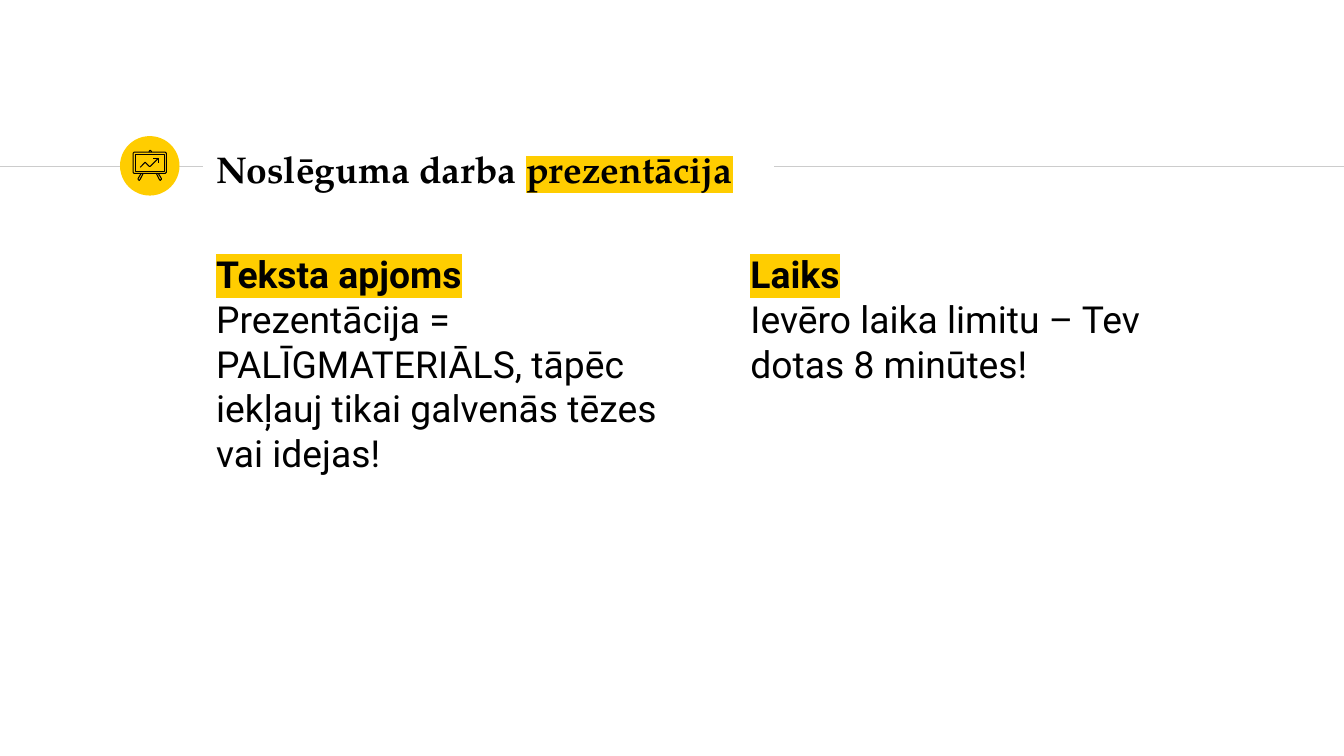
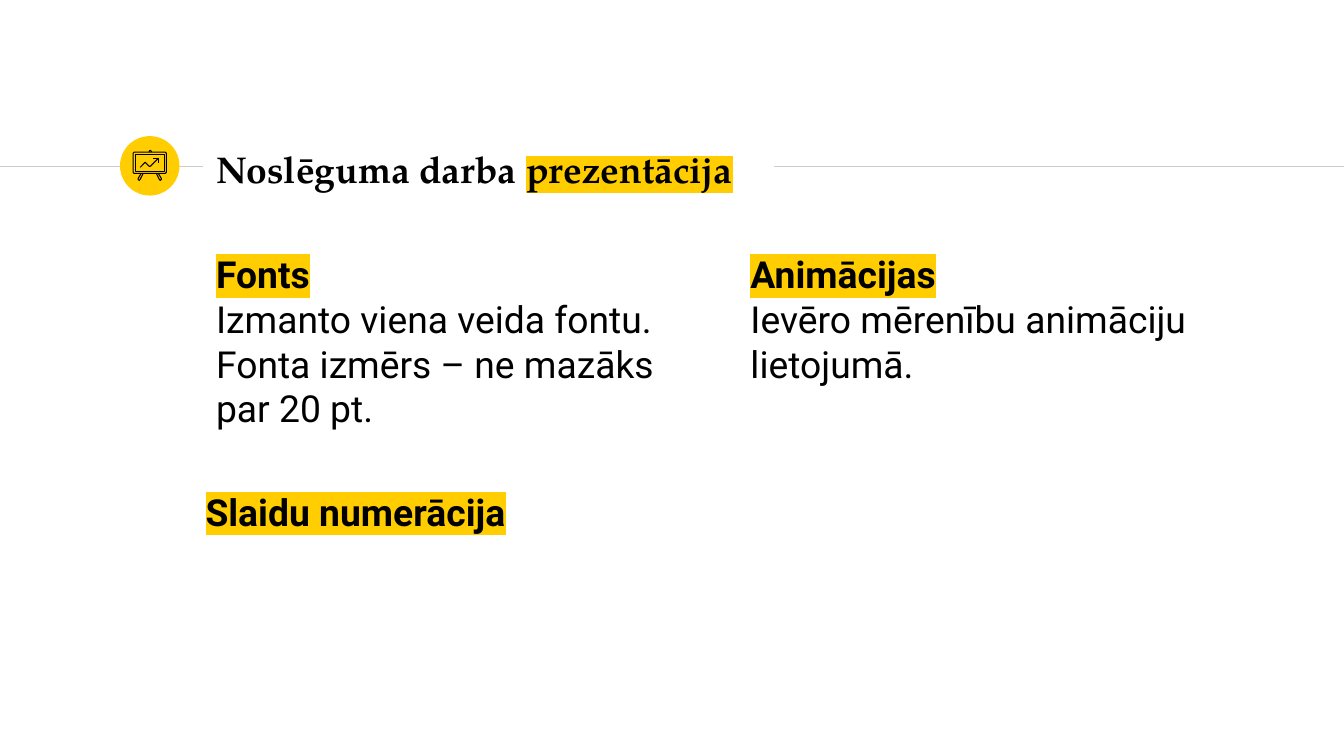
from lxml.etree import SubElement
from pptx import Presentation
from pptx.dml.color import RGBColor
from pptx.enum.shapes import MSO_CONNECTOR, MSO_SHAPE
from pptx.enum.text import MSO_ANCHOR, MSO_AUTO_SIZE, PP_ALIGN
from pptx.oxml.ns import qn
from pptx.util import Inches, Pt

YELLOW = RGBColor(0xFF, 0xCD, 0x00)
BLACK = RGBColor(0x00, 0x00, 0x00)
GREY = RGBColor(0xCC, 0xCC, 0xCC)
HEADING_FONT = "TeX Gyre Pagella"
BODY_FONT = "Roboto"
TEXT_SIZE = Pt(26.67)
INSET = Inches(2 / 15)
RULE_Y = 1.65
COLUMN_TOP = 2.36
COLUMN_WIDTH = 4.99
COLUMN_LEFTS = (2.01, 7.31)
FRAME_FORMAT = {
    "margin_left": INSET, "margin_top": INSET,
    "margin_right": INSET, "margin_bottom": INSET,
    "word_wrap": True, "auto_size": MSO_AUTO_SIZE.NONE,
}
PARAGRAPH_FORMAT = {
    "alignment": PP_ALIGN.LEFT, "line_spacing": 1.0,
    "space_before": Pt(0), "space_after": Pt(0),
}

ICON_CENTRE = 1.485
LEFT_LEG = [(1.4, 1.72), (1.37, 1.77), (1.37, 1.78), (1.38, 1.79), (1.39, 1.78), (1.42, 1.72)]
RIGHT_LEG = [(2 * ICON_CENTRE - x, y) for x, y in LEFT_LEG]
BOARD_EDGE = [(1.33, 1.51), (1.64, 1.51), (1.65, 1.52), (1.65, 1.71),
              (1.64, 1.72), (1.33, 1.72), (1.32, 1.71), (1.32, 1.52)]
BOARD_SHEET = [(1.34, 1.53), (1.63, 1.53), (1.63, 1.7), (1.34, 1.7)]
HANGER = [(1.5, 1.51), (1.5, 1.5), (1.49, 1.49), (1.48, 1.5), (1.48, 1.51)]
TREND = [(1.57, 1.57), (1.49, 1.65), (1.48, 1.65), (1.44, 1.61), (1.39, 1.66)]
TREND_TIP = [(1.52, 1.57), (1.57, 1.57), (1.57, 1.62)]
ICON_OUTLINES = [
    (BOARD_EDGE, True), (HANGER, False), (LEFT_LEG, False), (RIGHT_LEG, False),
    (BOARD_SHEET, True), (TREND, False), (TREND_TIP, False),
]


def apply_format(target, values):
    for attribute, value in values.items():
        setattr(target, attribute, value)


class Deck:
    def __init__(self):
        self.presentation = Presentation()
        apply_format(self.presentation, {
            "slide_width": Inches(13.33), "slide_height": Inches(7.5)})
        self.slide = None

    def start_slide(self):
        layout = self.presentation.slide_layouts.get_by_name("Two Content")
        self.slide = self.presentation.slides.add_slide(layout)
        self.rule(0, 2.01)
        self.rule(7.68, 13.33)
        self.badge()
        self.title("Noslēguma darba ", "prezentācija")

    def rule(self, start, end):
        line = self.slide.shapes.add_connector(
            MSO_CONNECTOR.STRAIGHT, Inches(start), Inches(RULE_Y), Inches(end), Inches(RULE_Y))
        line.line.color.rgb = GREY
        line.line.width = Pt(0.75)
        SubElement(line._element.spPr, qn("a:effectLst"))

    def badge(self):
        disc = self.slide.shapes.add_shape(
            MSO_SHAPE.OVAL, Inches(1.19), Inches(1.35), Inches(0.59), Inches(0.59))
        disc.shadow.inherit = False
        disc.fill.solid()
        disc.fill.fore_color.rgb = YELLOW
        disc.line.fill.background()
        icon = self.slide.shapes.add_group_shape()
        for points, closed in ICON_OUTLINES:
            self.outline(icon, points, closed)

    def outline(self, icon, points, closed):
        start, *corners = [(Inches(x), Inches(y)) for x, y in points]
        builder = icon.shapes.build_freeform(*start)
        builder.add_line_segments(corners, close=closed)
        stroke = builder.convert_to_shape()
        stroke.shadow.inherit = False
        stroke.fill.background()
        stroke.line.color.rgb = BLACK
        stroke.line.width = Pt(0.75)

    def place(self, holder, left, top, width, height):
        apply_format(holder, {
            "left": Inches(left), "top": Inches(top),
            "width": Inches(width), "height": Inches(height)})
        apply_format(holder.text_frame, FRAME_FORMAT)

    def run(self, paragraph, text, font=BODY_FONT, bold=False, marked=False):
        run = paragraph.add_run()
        run.text = text
        apply_format(run.font, {"name": font, "size": TEXT_SIZE, "bold": bold})
        run.font.color.rgb = BLACK
        if marked:
            properties = run.font._element
            highlight = SubElement(properties, qn("a:highlight"))
            SubElement(highlight, qn("a:srgbClr"), val=str(YELLOW))
            properties.find(qn("a:solidFill")).addnext(highlight)

    def title(self, plain, marked):
        heading = self.slide.shapes.title
        self.place(heading, 2.01, 1.35, 5.66, 0.64)
        heading.text_frame.vertical_anchor = MSO_ANCHOR.MIDDLE
        paragraph = heading.text_frame.paragraphs[0]
        apply_format(paragraph, PARAGRAPH_FORMAT)
        self.run(paragraph, plain, HEADING_FONT, True)
        self.run(paragraph, marked, HEADING_FONT, True, True)

    def column(self, index, heading, *sentences, height=4.71):
        body = self.slide.placeholders[index + 1]
        self.place(body, COLUMN_LEFTS[index], COLUMN_TOP, COLUMN_WIDTH, height)
        frame = body.text_frame
        for position, text in enumerate((heading, *sentences)):
            paragraph = frame.add_paragraph() if position else frame.paragraphs[0]
            apply_format(paragraph, PARAGRAPH_FORMAT)
            properties = paragraph._p.get_or_add_pPr()
            properties.set("marL", "0")
            properties.set("indent", "0")
            SubElement(properties, qn("a:buNone"))
            is_heading = position == 0
            self.run(paragraph, text, bold=is_heading, marked=is_heading)

    def label(self, text, left, top, width, height):
        note = self.slide.shapes.add_textbox(
            Inches(left), Inches(top), Inches(width), Inches(height))
        apply_format(note.text_frame, {
            "word_wrap": False, "auto_size": MSO_AUTO_SIZE.SHAPE_TO_FIT_TEXT})
        self.run(note.text_frame.paragraphs[0], text, bold=True, marked=True)


def main():
    deck = Deck()

    deck.start_slide()
    deck.column(0, "Teksta apjoms",
                "Prezentācija = PALĪGMATERIĀLS, tāpēc iekļauj tikai galvenās tēzes vai idejas!")
    deck.column(1, "Laiks", "Ievēro laika limitu – Tev dotas 8 minūtes!")

    deck.start_slide()
    deck.column(0, "Fonts", "Izmanto viena veida fontu.",
                "Fonta izmērs – ne mazāks par 20 pt.", height=2.36)
    deck.column(1, "Animācijas", "Ievēro mērenību animāciju lietojumā.")
    deck.label("Slaidu numerācija", 1.94, 4.8, 3.4, 0.55)

    deck.presentation.save("out.pptx")


if __name__ == "__main__":
    main()
